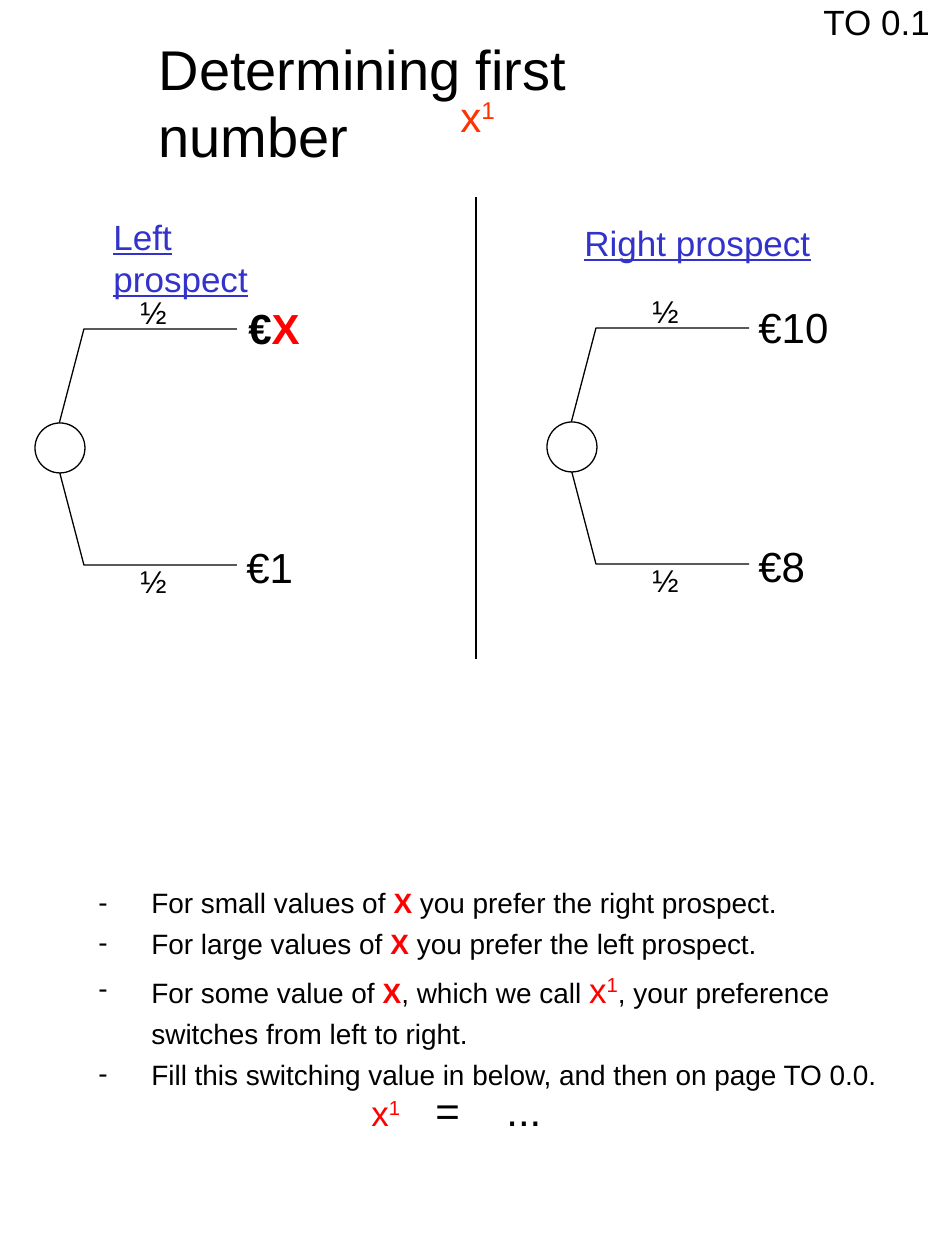
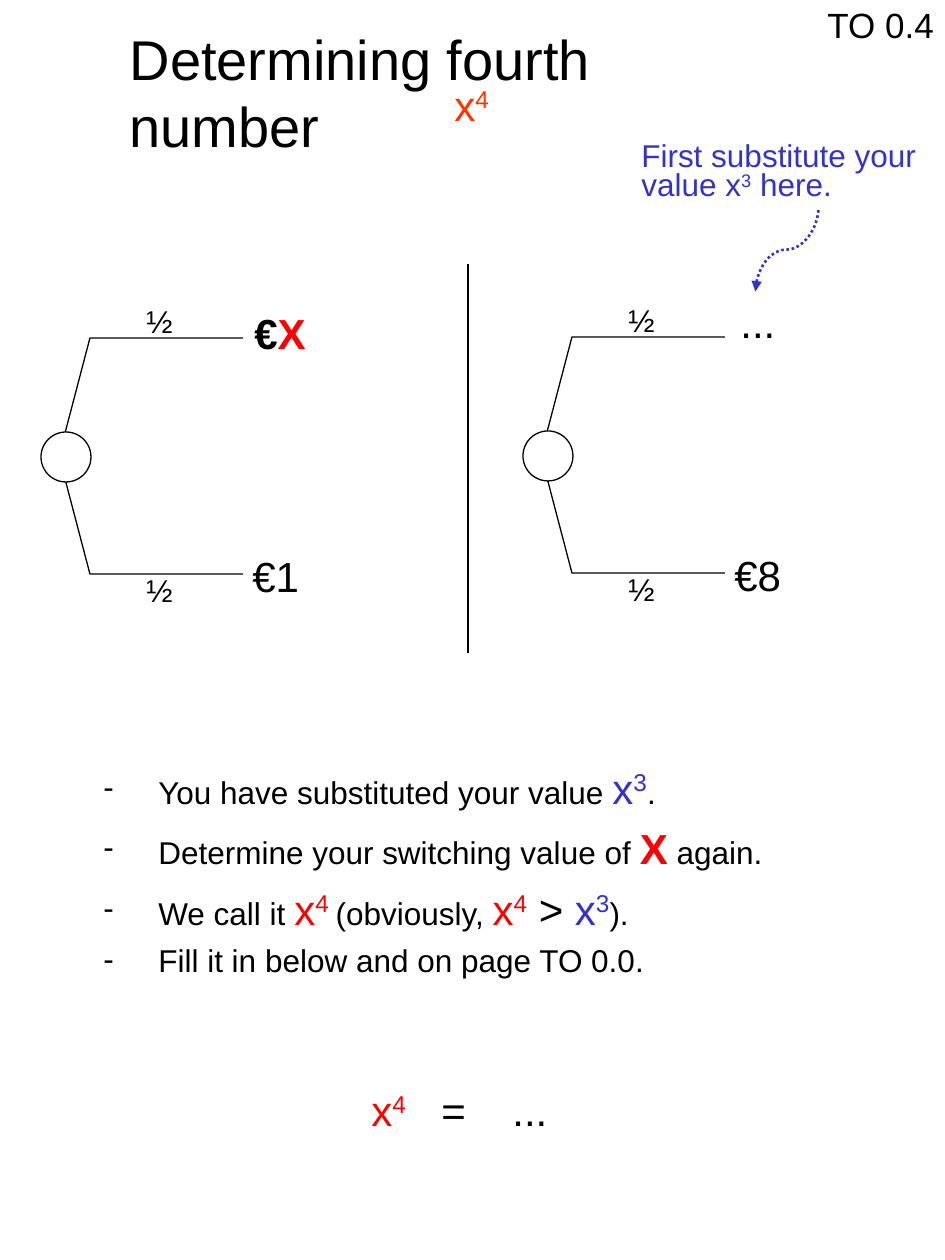
"""Build two slides that elicit switching values between a left and a right prospect."""
from lxml import etree
from pptx import Presentation
from pptx.dml.color import RGBColor
from pptx.enum.dml import MSO_LINE
from pptx.enum.shapes import MSO_CONNECTOR, MSO_SHAPE
from pptx.enum.text import MSO_ANCHOR, MSO_AUTO_SIZE, PP_ALIGN
from pptx.oxml.ns import qn
from pptx.util import Emu, Pt

STRAIGHT, CURVE = MSO_CONNECTOR.STRAIGHT, MSO_CONNECTOR.CURVE
OVAL = MSO_SHAPE.OVAL
TOP, LEFT = MSO_ANCHOR.TOP, PP_ALIGN.LEFT
NO_AUTOFIT = MSO_AUTO_SIZE.NONE
DOTTED = MSO_LINE.ROUND_DOT

COLOURS = {"ink": "000000", "paper": "FFFFFF", "blue": "3333CC",
           "red": "FF0000", "orange": "FF3300"}
FONT = "Arial"
PX = 914400 / 126
PAGE_SIZE = (945, 1260)
TITLE_ONLY = 5

NODE_SIZE = 50
BRANCH_START = (18, 24)
BRANCHES = [[(49, -94), (202, -94)], [(49, 142), (202, 142)]]
CHANCES = [(93, -136), (93, 133)]
CHANCE_SIZE = (52, 50)
LOWER_PAYOFF = (199, 112)
PAYOFF_SIZE = (110, 63)


def power(size, colour, exponent):
    """Return the spans of x raised to an exponent."""
    return [("x", size, colour), (exponent, size, colour, "^")]


def payoff(text):
    """Return the spans of a plain payoff."""
    return [(text, 24, "ink")]


EURO_X = [("€", 24, "ink", "b"), ("X", 24, "red", "b")]
SMALL_X = ("X", 16, "red", "b")

SLIDES = [
    {
        "title": ("Determining first number", (146, 28, 540, 146)),
        "symbol": (power(24, "orange", "1"), (448, 84, 60, 63)),
        "page": ("TO 0.1", (811, -6, 132, 54)),
        "divider": (476, 197, 659),
        "prospects": [
            {"node": (35, 423), "upper": EURO_X, "offset": (201, -127), "lower": payoff("€1")},
            {"node": (547, 422), "upper": payoff("€10"), "offset": (199, -127),
             "lower": payoff("€8")},
        ],
        "headings": [("Left prospect", (101, 209, 180, 96)),
                     ("Right prospect", (572, 215, 270, 54))],
        "steps": ((86, 873, 813, 224), 53, [
            [("For small values of ", 16, "ink"), SMALL_X,
             (" you prefer the right prospect.", 16, "ink")],
            [("For large values of ", 16, "ink"), SMALL_X,
             (" you prefer the left prospect.", 16, "ink")],
            [("For some value of ", 16, "ink"), SMALL_X, (", which we call ", 16, "ink"),
             *power(20, "red", "1"),
             (", your preference switches from left to right.", 16, "ink")],
            [("Fill this switching value in below, and then on page TO 0.0.", 16, "ink")],
        ]),
        "answer": (power(20, "red", "1"), (64, 135)),
    },
    {
        "title": ("Determining fourth number", (117, 18, 540, 146)),
        "symbol": (power(24, "orange", "4"), (442, 73, 60, 63)),
        "page": ("TO 0.4", (815, -3, 132, 54)),
        "divider": (468, 264, 653),
        "prospects": [
            {"node": (41, 432), "upper": EURO_X, "offset": (201, -131), "lower": payoff("€1")},
            {"node": (523, 431), "upper": payoff("..."), "offset": (205, -141),
             "lower": payoff("€8")},
        ],
        "hint": ((629, 140, 300, 69), [
            (0.7, [("First substitute your", 18, "blue")]),
            (0.8, [("value ", 18, "blue"), *power(18, "blue", "3"), (" here.", 18, "blue")]),
        ], (745, 218, 84, 63)),
        "steps": ((91, 746, 741, 240), 55, [
            [("You have substituted your value ", 18, "ink"), *power(24, "blue", "3"),
             (".", 18, "ink")],
            [("Determine your switching value of ", 18, "ink"), ("X", 24, "red", "b"),
             (" again.", 18, "ink")],
            [("We call it ", 18, "ink"), *power(24, "red", "4 "),
             ("(obviously, ", 18, "ink"), *power(24, "red", "4"), (" > ", 24, "ink"),
             *power(24, "blue", "3"), (").", 18, "ink")],
            [("Fill it in below and on page TO 0.0.", 18, "ink")],
        ]),
        "answer": (power(24, "red", "4"), (70, 141)),
    },
]


def px(*lengths):
    """Turn pixel lengths into EMU."""
    return [Emu(round(length * PX)) for length in lengths]


def colour_of(name):
    """Return the named colour."""
    return RGBColor.from_string(COLOURS[name])


def shifted(point, offset):
    """Return a point moved by an offset."""
    return point[0] + offset[0], point[1] + offset[1]


def write(para, spans):
    """Add formatted spans to a paragraph."""
    for text, size, colour, *flags in spans:
        span = para.add_run()
        span.text = text
        font = span.font
        font.name, font.size = FONT, Pt(size)
        font.color.rgb = colour_of(colour)
        font.bold = "b" in flags
        font.underline = "u" in flags
        if "^" in flags:
            font._element.set("baseline", "30000")


def add_text(slide, area, paragraphs, wrap=False):
    """Add a text box and return its paragraphs."""
    frame = slide.shapes.add_textbox(*px(*area)).text_frame
    frame.word_wrap = wrap
    for index, spans in enumerate(paragraphs):
        write(frame.add_paragraph() if index else frame.paragraphs[0], spans)
    return frame.paragraphs


def style_line(line, colour="ink", width=0.75):
    """Set the colour and width of a line."""
    line.color.rgb = colour_of(colour)
    line.width = Pt(width)


def add_line(slide, kind, ends, colour="ink", width=0.75):
    """Add a connector without a shadow."""
    connector = slide.shapes.add_connector(kind, *px(*ends))
    style_line(connector.line, colour, width)
    etree.SubElement(connector._element.spPr, qn("a:effectLst"))
    return connector


def add_title(slide, text, area):
    """Place and format the title placeholder."""
    title = slide.shapes.title
    title.left, title.top, title.width, title.height = px(*area)
    frame = title.text_frame
    frame.word_wrap, frame.auto_size = True, NO_AUTOFIT
    frame.vertical_anchor = TOP
    para = frame.paragraphs[0]
    para.alignment = LEFT
    write(para, [(text, 32, "ink")])


def add_prospect(slide, prospect):
    """Draw a chance node with two branches, their chances and payoffs."""
    node = prospect["node"]
    for branch, chance in zip(BRANCHES, CHANCES):
        builder = slide.shapes.build_freeform(*px(*shifted(node, BRANCH_START)))
        builder.add_line_segments([px(*shifted(node, point)) for point in branch], close=False)
        shape = builder.convert_to_shape()
        shape.shadow.inherit = False
        shape.fill.background()
        style_line(shape.line)
        add_text(slide, (*shifted(node, chance), *CHANCE_SIZE), [[("½", 18, "ink")]])
    circle = slide.shapes.add_shape(OVAL, *px(*node, NODE_SIZE, NODE_SIZE))
    circle.shadow.inherit = False
    circle.fill.solid()
    circle.fill.fore_color.rgb = colour_of("paper")
    style_line(circle.line)
    for spans, offset in ((prospect["upper"], prospect["offset"]),
                          (prospect["lower"], LOWER_PAYOFF)):
        add_text(slide, (*shifted(node, offset), *PAYOFF_SIZE), [spans], wrap=True)


def add_hint(slide, area, lines, arrow_area):
    """Add the hint and its dotted curved arrow."""
    paras = add_text(slide, area, [spans for _, spans in lines])
    for para, (spacing, _) in zip(paras, lines):
        para.line_spacing = spacing
    left, top, width, height = arrow_area
    arrow = add_line(slide, CURVE, (left, top, left + width, top + height), "blue", 1.5)
    arrow.line.dash_style = DOTTED
    arrow._element.spPr.find(qn("a:xfrm")).set("rot", "16200000")
    etree.SubElement(arrow.line._get_or_add_ln(), qn("a:headEnd"), type="triangle")


def add_steps(slide, area, indent, steps):
    """Add the dashed list of steps."""
    for para in add_text(slide, area, steps, wrap=True):
        para.line_spacing = 1.2
        properties = para._p.get_or_add_pPr()
        margin = px(indent)[0]
        properties.set("marL", str(margin))
        properties.set("indent", str(-margin))
        etree.SubElement(properties, qn("a:buFont"), typeface=FONT)
        etree.SubElement(properties, qn("a:buChar"), char="-")


def add_answer(slide, symbol, stops):
    """Add the line where the switching value is filled in."""
    spans = [*symbol, ("\t=\t...", 24, "ink")]
    para = add_text(slide, (359, 1078, 230, 63), [spans])[0]
    tabs = etree.SubElement(para._p.get_or_add_pPr(), qn("a:tabLst"))
    for stop in px(*stops):
        etree.SubElement(tabs, qn("a:tab"), pos=str(stop), algn="l")


def add_page(deck, content):
    """Build one slide from its content."""
    slide = deck.slides.add_slide(deck.slide_layouts[TITLE_ONLY])
    add_title(slide, *content["title"])
    symbol, area = content["symbol"]
    add_text(slide, area, [symbol])
    label, area = content["page"]
    add_text(slide, area, [[(label, 20, "ink")]])
    for prospect in content["prospects"]:
        add_prospect(slide, prospect)
    for heading, area in content.get("headings", []):
        add_text(slide, area, [[(heading, 20, "blue", "u")]], wrap=True)
    x, top, bottom = content["divider"]
    add_line(slide, STRAIGHT, (x, top, x, bottom))
    if "hint" in content:
        add_hint(slide, *content["hint"])
    add_steps(slide, *content["steps"])
    add_answer(slide, *content["answer"])


def main():
    """Build and save the deck."""
    deck = Presentation()
    deck.slide_width, deck.slide_height = px(*PAGE_SIZE)
    for content in SLIDES:
        add_page(deck, content)
    deck.save("out.pptx")


if __name__ == "__main__":
    main()
